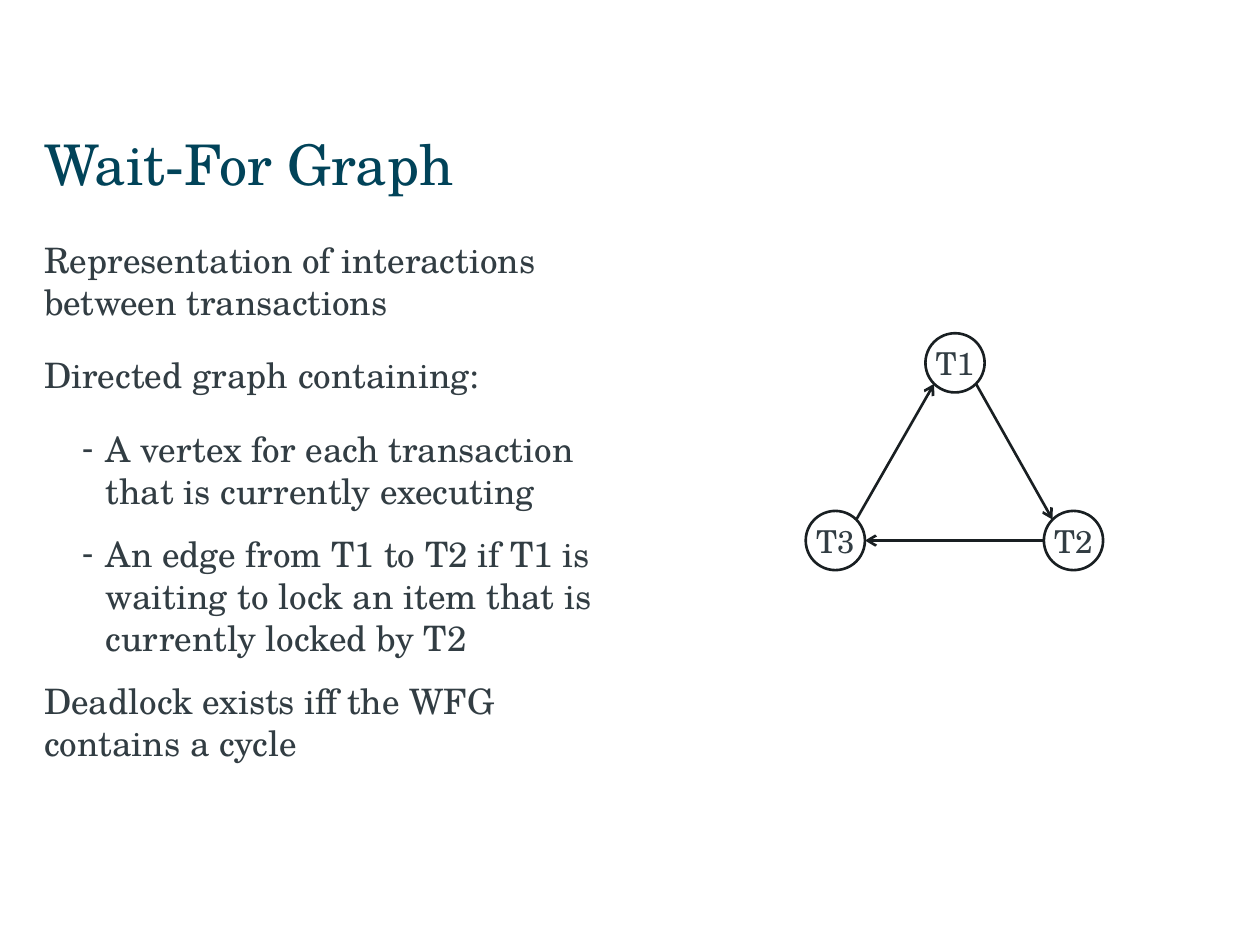
from math import cos, hypot, radians

from lxml.etree import SubElement
from pptx import Presentation
from pptx.dml.color import RGBColor
from pptx.enum.shapes import MSO_CONNECTOR as Connector, MSO_SHAPE as Shape
from pptx.enum.text import MSO_ANCHOR as Anchor, MSO_AUTO_SIZE as AutoSize, PP_ALIGN as Align
from pptx.oxml.ns import qn
from pptx.util import Inches, Pt

TITLE_COLOR = RGBColor(0x01, 0x43, 0x59)
TEXT_COLOR = RGBColor(0x32, 0x3D, 0x43)
LINE_COLOR = RGBColor(0x19, 0x1F, 0x22)
WHITE = RGBColor(0xFF, 0xFF, 0xFF)

STATEMENTS = [
    (0, "Representation of interactions between transactions"),
    (0, "Directed graph containing:"),
    (1, "A vertex for each transaction that is currently executing"),
    (1, "An edge from T1 to T2 if T1 is waiting to lock an item that is currently locked by T2"),
    (0, "Deadlock exists iff the WFG contains a cycle"),
]
TRANSACTIONS = {"T1": (7.58, 2.88), "T2": (8.52, 4.29), "T3": (6.63, 4.29)}
WAITS = [("T1", "T2"), ("T2", "T3"), ("T3", "T1")]


class GraphSlide:
    font_name = "TeX Gyre Schola"
    line_width = Pt(1.5)
    diameter = 0.47

    def __init__(self, slide):
        self.slide = slide

    def style_runs(self, paragraph, size, color):
        for run in paragraph.runs:
            run.font.name = self.font_name
            run.font.size = Pt(size)
            run.font.color.rgb = color

    def place(self, placeholder, left, top, width, height):
        placeholder.left, placeholder.top = Inches(left), Inches(top)
        placeholder.width, placeholder.height = Inches(width), Inches(height)
        frame = placeholder.text_frame
        frame.margin_left = 0
        frame.margin_right = Inches(0.1)
        frame.margin_top = frame.margin_bottom = Inches(0.05)
        frame.vertical_anchor = Anchor.TOP
        frame.auto_size = AutoSize.NONE
        frame.word_wrap = True
        return frame

    def title(self, wording, *box):
        frame = self.place(self.slide.shapes.title, *box)
        frame.text = wording
        heading = frame.paragraphs[0]
        heading.alignment = Align.LEFT
        self.style_runs(heading, 32, TITLE_COLOR)

    def body(self, statements, *box):
        frame = self.place(self.slide.placeholders[1], *box)
        frame.text = "\n".join(wording for _, wording in statements)
        for paragraph, (level, _) in zip(frame.paragraphs, statements):
            self.bullet(paragraph, level)
            paragraph.level = level
            paragraph.space_before = Pt(0)
            paragraph.space_after = Pt(12 if level else 18)
            self.style_runs(paragraph, 20, TEXT_COLOR)

    def bullet(self, paragraph, level):
        properties = paragraph._p.get_or_add_pPr()
        properties.set("marL", str(Inches(0.49 * level)))
        properties.set("indent", str(Inches(-0.19 * level)))
        if level:
            SubElement(properties, qn("a:buChar")).set("char", "-")
        else:
            SubElement(properties, qn("a:buNone"))

    def vertex(self, label, center):
        left, top = (Inches(value - self.diameter / 2) for value in center)
        size = Inches(self.diameter)
        circle = self.slide.shapes.add_shape(Shape.OVAL, left, top, size, size)
        circle.shadow.inherit = False
        circle.fill.solid()
        circle.fill.fore_color.rgb = WHITE
        circle.line.color.rgb = LINE_COLOR
        circle.line.width = self.line_width
        frame = circle.text_frame
        frame.word_wrap = False
        frame.vertical_anchor = Anchor.MIDDLE
        frame.text = label
        frame.paragraphs[0].alignment = Align.CENTER
        self.style_runs(frame.paragraphs[0], 18, TEXT_COLOR)

    def edge(self, waiting, holding):
        run, rise = holding[0] - waiting[0], holding[1] - waiting[1]
        radius = self.diameter / 2
        if rise:
            diagonal = radius * cos(radians(45))
            dx = diagonal if run > 0 else -diagonal
            dy = diagonal if rise > 0 else -diagonal
        else:
            dx, dy = radius * run / hypot(run, rise), 0
        arrow = self.slide.shapes.add_connector(
            Connector.STRAIGHT,
            Inches(waiting[0] + dx), Inches(waiting[1] + dy),
            Inches(holding[0] - dx), Inches(holding[1] - dy),
        )
        arrow.line.color.rgb = LINE_COLOR
        arrow.line.width = self.line_width
        SubElement(arrow.line._get_or_add_ln(), qn("a:tailEnd")).set("type", "arrow")
        SubElement(arrow._element.spPr, qn("a:effectLst"))


def main():
    deck = Presentation()
    deck.slide_width, deck.slide_height = Inches(10), Inches(7.5)
    wait_for = GraphSlide(deck.slides.add_slide(deck.slide_layouts[1]))
    wait_for.title("Wait-For Graph", 0.35, 0.98, 9.29, 0.71)
    wait_for.body(STATEMENTS, 0.35, 1.84, 4.48, 4.91)
    for label, center in TRANSACTIONS.items():
        wait_for.vertex(label, center)
    for waiting, holding in WAITS:
        wait_for.edge(TRANSACTIONS[waiting], TRANSACTIONS[holding])
    deck.save("out.pptx")


if __name__ == "__main__":
    main()
